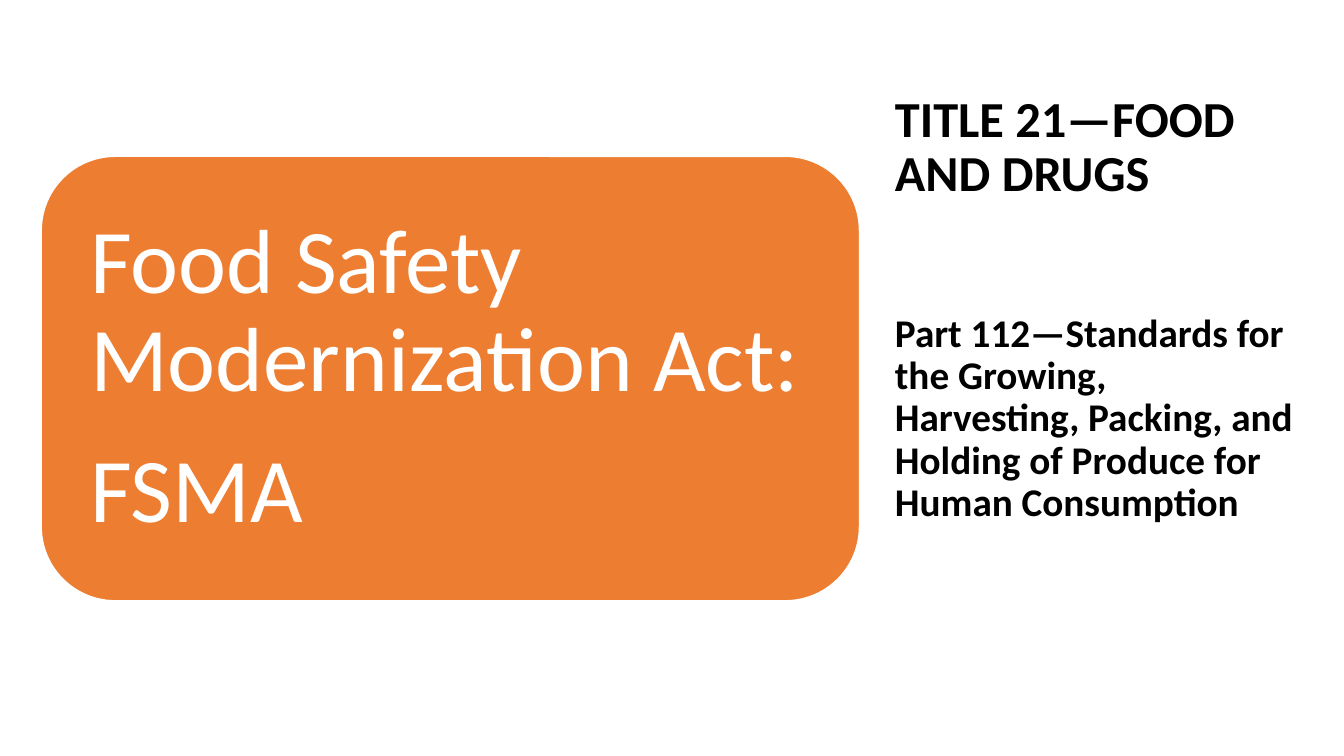
from pptx import Presentation
from pptx.dml.color import RGBColor
from pptx.enum.shapes import MSO_SHAPE
from pptx.enum.text import MSO_ANCHOR, MSO_AUTO_SIZE, PP_ALIGN
from pptx.util import Cm, Pt

COLORS = {"card": "ED7D31", "white": "FFFFFF", "black": "000000"}
FONT = "Calibri"


def color(name):
    return RGBColor.from_string(COLORS[name])


def format_paragraph(p, size, font_color, bold=False):
    p.alignment = PP_ALIGN.LEFT
    p.line_spacing = 0.9
    for r in p.runs:
        r.font.name = FONT
        r.font.size = Pt(size)
        r.font.bold = bold
        r.font.color.rgb = font_color


# Regulation title and part, in the title placeholder
def add_regulation(s, left, top, width, height):
    sp = s.shapes.title
    sp.left, sp.top, sp.width, sp.height = Cm(left), Cm(top), Cm(width), Cm(height)
    tf = sp.text_frame
    tf.word_wrap = True
    tf.auto_size = MSO_AUTO_SIZE.NONE
    tf.vertical_anchor = MSO_ANCHOR.TOP
    tf.margin_top = Cm(0.4)
    tf.text = ("TITLE 21—FOOD AND DRUGS\n"
               "Part 112—Standards for the Growing, Harvesting, Packing, "
               "and Holding of Produce for Human Consumption")
    for p, size in zip(tf.paragraphs, (36, 28)):
        format_paragraph(p, size, color("black"), bold=True)
    tf.paragraphs[0].space_after = Pt(79)


# Rounded card with the name of the act
def add_act_card(s, left, top, width, height):
    sp = s.shapes.add_shape(MSO_SHAPE.ROUNDED_RECTANGLE,
                            Cm(left), Cm(top), Cm(width), Cm(height))
    sp.shadow.inherit = False
    sp.fill.solid()
    sp.fill.fore_color.rgb = color("card")
    sp.line.color.rgb = color("white")
    sp.line.width = Pt(1)
    tf = sp.text_frame
    tf.word_wrap = True
    tf.vertical_anchor = MSO_ANCHOR.MIDDLE
    tf.margin_left = tf.margin_right = tf.margin_top = tf.margin_bottom = Cm(0.69)
    tf.text = "Food Safety Modernization Act:\nFSMA"
    for p in tf.paragraphs:
        format_paragraph(p, 65, color("white"))
        p.space_after = Pt(23)


def main():
    prs = Presentation()
    prs.slide_width, prs.slide_height = Cm(33.87), Cm(19.05)
    s = prs.slides.add_slide(prs.slide_layouts[5])
    add_regulation(s, 22.3, 1.96, 10.54, 15.52)
    add_act_card(s, 1.04, 3.94, 20.62, 11.2)
    prs.save("out.pptx")


if __name__ == "__main__":
    main()
